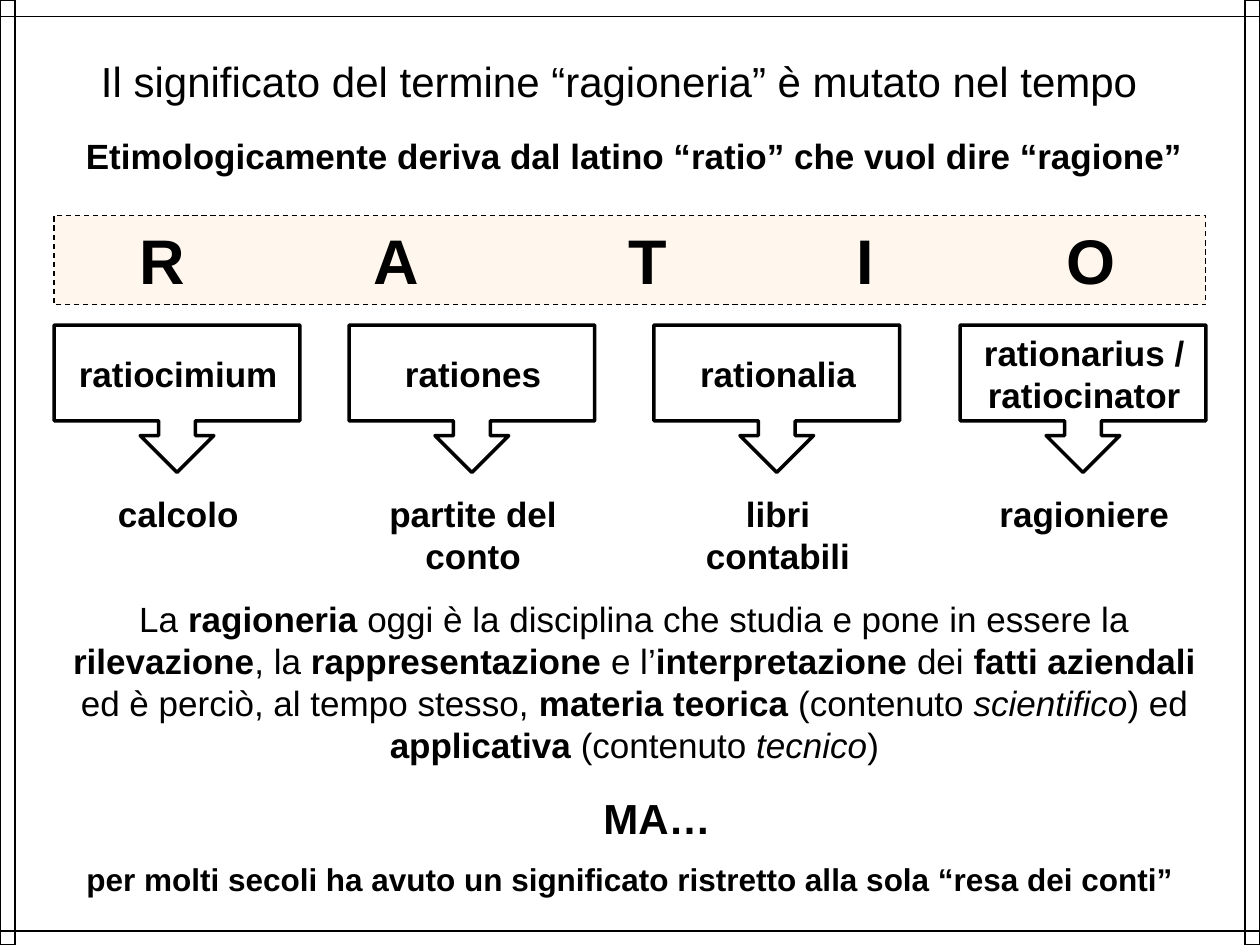
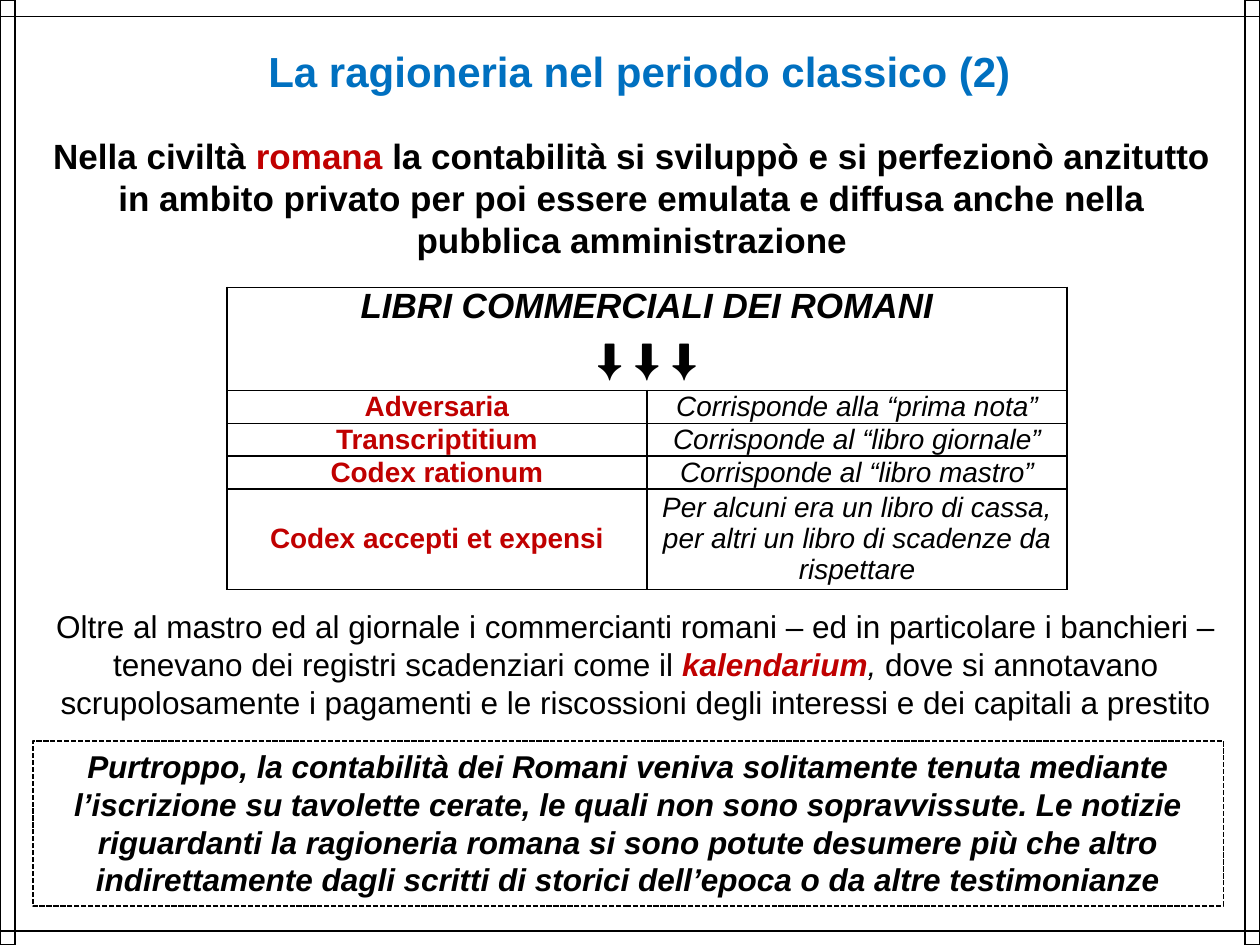
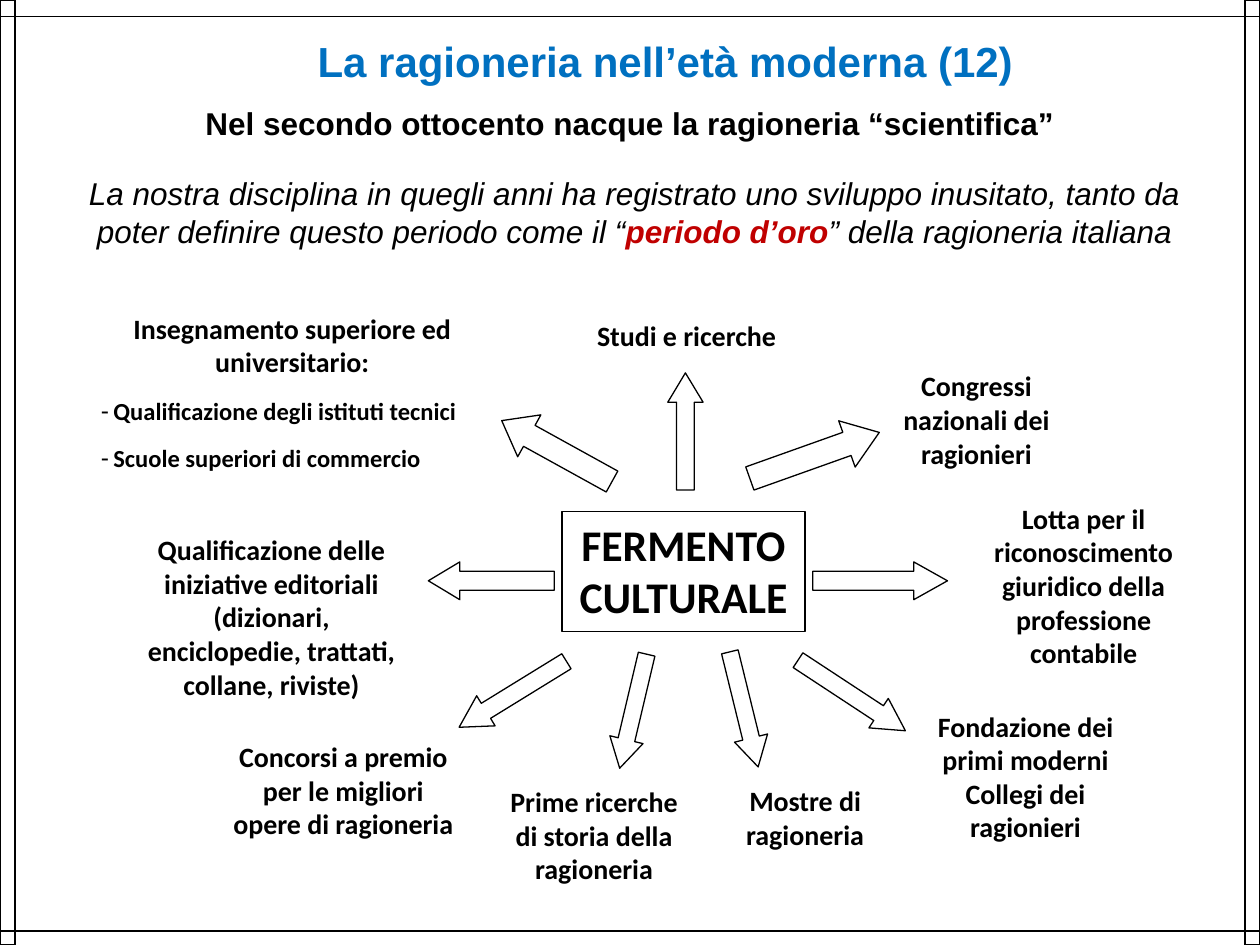
from dataclasses import dataclass

from lxml.etree import SubElement
from pptx import Presentation
from pptx.dml.color import RGBColor
from pptx.enum.dml import MSO_LINE
from pptx.enum.shapes import MSO_CONNECTOR, MSO_SHAPE as SHAPE
from pptx.enum.text import MSO_ANCHOR as ANCHOR, MSO_AUTO_SIZE, PP_ALIGN as ALIGN
from pptx.oxml.ns import qn
from pptx.util import Inches, Pt


@dataclass(frozen=True)
class Theme:
    black: RGBColor = RGBColor(0, 0, 0)
    white: RGBColor = RGBColor(255, 255, 255)
    blue: RGBColor = RGBColor(0x00, 0x70, 0xC0)
    red: RGBColor = RGBColor(0xC0, 0x00, 0x00)
    orange: RGBColor = RGBColor(0xFF, 0x99, 0x00)
    font: str = "Arial"
    diagram_font: str = "Calibri"
    letters: int = 36
    hub: int = 25
    title: int = 24
    text: int = 20
    small: int = 18
    label: int = 16
    list_item: int = 14
    thin: float = 0.75
    thick: float = 2


class Deck:
    TITLE_AND_BODY, TITLE_ONLY = 1, 5

    def __init__(self, theme):
        self.theme = theme
        self.prs = Presentation()
        self.prs.slide_width, self.prs.slide_height = Inches(10), Inches(7.5)
        self.slide = None

    def new_slide(self, layout=TITLE_ONLY):
        """Start a slide with the ruled frame that all slides share."""
        self.slide = self.prs.slides.add_slide(self.prs.slide_layouts[layout])
        for x in (0, 9.88):
            self.shape(SHAPE.RECTANGLE, (x, 0, 0.12, 7.5), fill=None)
        for y in (0.13, 7.39):
            self.rule(y)

    def rule(self, y):
        line = self.slide.shapes.add_connector(
            MSO_CONNECTOR.STRAIGHT, 0, Inches(y), Inches(10), Inches(y))
        line.line.color.rgb = self.theme.black
        line.line.width = Pt(self.theme.thin)
        SubElement(line._element.spPr, qn("a:effectLst"))

    def add_runs(self, p, content, size, style="", color=None, font=None):
        """Fill p from a string or (text, style) runs; styles: b bold, i italic, r red."""
        runs = [(content, style)] if isinstance(content, str) else content
        for text, flags in runs:
            r = p.add_run()
            r.text = text
            r.font.name = font or self.theme.font
            r.font.size = Pt(size)
            r.font.bold = "b" in flags
            r.font.italic = "i" in flags
            r.font.color.rgb = self.theme.red if "r" in flags else color or self.theme.black

    def fill_frame(self, sp, content, size, style="", align=ALIGN.CENTER,
                   anchor=ANCHOR.TOP, **kw):
        tf = sp.text_frame
        tf.word_wrap = True
        tf.auto_size = MSO_AUTO_SIZE.NONE
        tf.vertical_anchor = anchor
        tf.paragraphs[0].alignment = align
        self.add_runs(tf.paragraphs[0], content, size, style, **kw)

    def place(self, sp, at):
        sp.left, sp.top, sp.width, sp.height = map(Inches, at)

    def title(self, at, text, style="b", color=None, align=ALIGN.LEFT):
        sp = self.slide.shapes.title
        self.place(sp, at)
        self.fill_frame(sp, text, self.theme.title, style, align, color=color)

    def text(self, at, content, size, style="", **kw):
        sp = self.slide.shapes.add_textbox(*map(Inches, at))
        self.fill_frame(sp, content, size, style, **kw)

    def shape(self, kind, at, fill="white", line=True, width=None, dash=None):
        sp = self.slide.shapes.add_shape(kind, *map(Inches, at))
        sp.shadow.inherit = False
        if fill:
            sp.fill.solid()
            sp.fill.fore_color.rgb = getattr(self.theme, fill)
        else:
            sp.fill.background()
        if line:
            sp.line.color.rgb = self.theme.black
            sp.line.width = Pt(width or self.theme.thin)
            if dash:
                sp.line.dash_style = dash
        else:
            sp.line.fill.background()
        return sp

    def label(self, at, text, size=None, line=False):
        sp = self.shape(SHAPE.RECTANGLE, at, line=line)
        self.fill_frame(sp, text, size or self.theme.label, "b", font=self.theme.diagram_font)

    def arrow(self, kind, at, rotation=0):
        """Block arrow whose head takes a quarter of its length."""
        sp = self.shape(kind, at)
        sp.rotation = rotation
        sp.adjustments[1] = 0.25 * max(at[2:]) / min(at[2:])

    def dash_list(self, at, heading, items):
        t = self.theme
        sp = self.slide.placeholders[1]
        self.place(sp, at)
        self.fill_frame(sp, heading, t.label, "b", font=t.diagram_font)
        tf = sp.text_frame
        for item in items:
            p = tf.add_paragraph()
            p.alignment = ALIGN.LEFT
            self.add_runs(p, item, t.list_item, "b", font=t.diagram_font)
        for i, p in enumerate(tf.paragraphs):
            p.space_before, p.space_after = Pt(0), Pt(10)
            pPr = p._p.get_or_add_pPr()
            indent = Inches(0.1) if i else 0
            pPr.set("marL", str(indent))
            pPr.set("indent", str(-indent))
            if i:
                SubElement(pPr, qn("a:buChar"), char="-")
            else:
                SubElement(pPr, qn("a:buNone"))

    def tab_stops(self, p, stops):
        tabs = SubElement(p._p.get_or_add_pPr(), qn("a:tabLst"))
        for stop in stops:
            SubElement(tabs, qn("a:tab"), pos=str(Inches(stop)), algn="ctr")

    def format_cell(self, cell):
        cell.margin_left = cell.margin_right = Inches(0.05)
        cell.margin_top = cell.margin_bottom = 0
        tcPr = cell._tc.get_or_add_tcPr()
        for side in ("lnL", "lnR", "lnT", "lnB"):
            ln = SubElement(tcPr, qn(f"a:{side}"), w=str(Pt(1)))
            fill = SubElement(ln, qn("a:solidFill"))
            SubElement(fill, qn("a:srgbClr"), val=str(self.theme.black))
        cell.fill.background()

    def table(self, at, heading, arrows, rows, heights):
        t = self.theme
        table = self.slide.shapes.add_table(len(rows) + 1, 2, *map(Inches, at)).table
        table.first_row = table.horz_banding = False
        for row, height in zip(table.rows, heights):
            row.height = Inches(height)
        for cell in table.iter_cells():
            self.format_cell(cell)
        head = table.cell(0, 0)
        head.merge(table.cell(0, 1))
        p = head.text_frame.paragraphs[0]
        p.alignment = ALIGN.CENTER
        self.add_runs(p, heading, t.text, "bi")
        p = head.text_frame.add_paragraph()
        p.alignment = ALIGN.CENTER
        p.space_before = Pt(6)
        self.add_runs(p, arrows, t.title, "b")
        for i, row in enumerate(rows, 1):
            for j, (text, style) in enumerate(zip(row, ("br", "i"))):
                cell = table.cell(i, j)
                cell.vertical_anchor = ANCHOR.MIDDLE
                p = cell.text_frame.paragraphs[0]
                p.alignment = ALIGN.CENTER
                self.add_runs(p, text, t.label, style)


def etymology_slide(deck):
    t = deck.theme
    deck.new_slide()
    deck.title((0, 0.39, 9.83, 0.51), "Il significato del termine “ragioneria” è mutato nel tempo",
               style="", align=ALIGN.CENTER)
    deck.text((0.23, 1.02, 9.61, 0.44),
              "Etimologicamente deriva dal latino “ratio” che vuol dire “ragione”", t.text, "b")

    terms = [
        (0.43, "ratiocimium", "calcolo"),
        (2.77, "rationes", "partite del conto"),
        (5.19, "rationalia", "libri contabili"),
        (7.62, "rationarius / ratiocinator", "ragioniere"),
    ]
    for x, latin, meaning in terms:
        deck.shape(SHAPE.DOWN_ARROW_CALLOUT, (x, 2.58, 1.95, 1.17), width=t.thick)
        deck.text((x + 0.08, 2.58, 1.81, 0.77), latin, t.text, "b", anchor=ANCHOR.MIDDLE)
        deck.text((x + 0.08, 3.86, 1.81, 0.77), meaning, t.text, "b")

    band = deck.shape(SHAPE.RECTANGLE, (0.43, 1.71, 9.14, 0.71), fill="orange",
                      dash=MSO_LINE.DASH)
    color = band._element.spPr.find(qn("a:solidFill")).find(qn("a:srgbClr"))
    SubElement(color, qn("a:alpha"), val="7000")
    deck.tab_stops(band.text_frame.paragraphs[0], (0.76, 2.62, 4.61, 6.34, 8.13))
    deck.fill_frame(band, "\tR\tA\tT\tI\tO", t.letters, "b", align=ALIGN.LEFT)

    deck.text((0.31, 4.69, 9.45, 1.45), [
        ("La ", ""), ("ragioneria", "b"),
        (" oggi è la disciplina che studia e pone in essere la ", ""),
        ("rilevazione", "b"), (", la ", ""), ("rappresentazione", "b"),
        (" e l’", ""), ("interpretazione ", "b"), ("dei ", ""),
        ("fatti aziendali ", "b"), ("ed è perciò, al tempo stesso, ", ""),
        ("materia teorica ", "b"), ("(contenuto ", ""), ("scientifico", "i"),
        (") ed ", ""), ("applicativa ", "b"), ("(contenuto ", ""),
        ("tecnico", "i"), (")", ""),
    ], t.text)
    deck.text((0.47, 6.78, 9.06, 0.4),
              "per molti secoli ha avuto un significato ristretto alla sola “resa dei conti”",
              t.small, "b")
    deck.text((4.69, 6.24, 1.48, 0.51), "MA…", t.title, "b", align=ALIGN.LEFT)


def roman_books_slide(deck):
    t = deck.theme
    deck.new_slide()
    deck.title((2.03, 0.31, 6.3, 0.51), "La ragioneria nel periodo classico (2)", color=t.blue)
    deck.text((0.29, 1.02, 9.45, 1.11), [
        ("Nella civiltà ", "b"), ("romana", "br"),
        (" la contabilità si sviluppò e si perfezionò anzitutto in ambito privato per poi "
         "essere emulata e diffusa anche nella pubblica amministrazione", "b"),
    ], t.text)
    deck.table((1.8, 2.28, 6.67, 2.42), "LIBRI COMMERCIALI DEI ROMANI", "⬇ ⬇ ⬇", [
        ("Adversaria", "Corrisponde alla “prima nota”"),
        ("Transcriptitium", "Corrisponde al “libro giornale”"),
        ("Codex rationum", "Corrisponde al “libro mastro”"),
        ("Codex accepti et expensi",
         "Per alcuni era un libro di cassa, per altri un libro di scadenze da rispettare"),
    ], heights=(0.82, 0.26, 0.26, 0.26, 0.8))
    deck.text((0.2, 4.77, 9.69, 1.01), [
        ("Oltre al mastro ed al giornale i commercianti romani – ed in particolare i "
         "banchieri – tenevano dei registri scadenziari come il ", ""),
        ("kalendarium", "bir"), (", ", "i"),
        ("dove si annotavano scrupolosamente i pagamenti e le riscossioni degli interessi "
         "e dei capitali a prestito", ""),
    ], t.small)
    note = deck.shape(SHAPE.RECTANGLE, (0.26, 5.88, 9.45, 1.31), fill=None, width=1,
                      dash=MSO_LINE.SQUARE_DOT)
    deck.fill_frame(
        note,
        "Purtroppo, la contabilità dei Romani veniva solitamente tenuta mediante "
        "l’iscrizione su tavolette cerate, le quali non sono sopravvissute. Le notizie "
        "riguardanti la ragioneria romana si sono potute desumere più che altro "
        "indirettamente dagli scritti di storici dell’epoca o da altre testimonianze",
        t.small, "bi")


def cultural_ferment_slide(deck):
    t = deck.theme
    deck.new_slide(Deck.TITLE_AND_BODY)
    deck.title((2.42, 0.23, 5.9, 0.51), "La ragioneria nell’età moderna (12)", color=t.blue)
    deck.text((0.47, 0.78, 9.06, 0.4),
              "Nel secondo ottocento nacque la ragioneria “scientifica”", t.small, "b")
    deck.text((0.31, 1.33, 9.45, 0.71), [
        ("La nostra disciplina in quegli anni ha registrato uno sviluppo inusitato, tanto "
         "da poter definire questo periodo come il “", "i"),
        ("periodo d’oro", "bir"), ("” della ragioneria italiana", "i"),
    ], t.small)

    deck.dash_list((0.7, 2.42, 3.24, 1.43), "Insegnamento superiore ed universitario:",
                   ["Qualificazione degli istituti tecnici", "Scuole superiori di commercio"])
    labels = [
        ((4.55, 2.48, 1.8, 0.47), "Studi e ricerche"),
        ((7.01, 2.88, 1.48, 0.87), "Congressi nazionali dei ragionieri"),
        ((7.59, 3.93, 2.02, 1.39),
         "Lotta per il riconoscimento giuridico della professione contabile"),
        ((7.21, 5.58, 1.86, 1.16), "Fondazione dei primi moderni Collegi dei ragionieri"),
        ((5.67, 6.17, 1.44, 0.63), "Mostre di ragioneria"),
        ((3.91, 6.18, 1.61, 0.87), "Prime ricerche di storia della ragioneria"),
        ((1.72, 5.82, 2.01, 0.87), "Concorsi a premio per le migliori opere di ragioneria"),
        ((1.02, 4.18, 2.27, 1.44), "Qualificazione delle iniziative editoriali (dizionari, "
                                   "enciclopedie, trattati, collane, riviste)"),
    ]
    for at, text in labels:
        deck.label(at, text)
    deck.label((4.46, 4.06, 1.93, 0.95), "FERMENTO CULTURALE", t.hub, line=True)

    arrows = [
        (SHAPE.UP_ARROW, (5.3, 2.96, 0.28, 0.93), 0),
        (SHAPE.UP_ARROW, (6.27, 3.07, 0.39, 1.09), 70.4),
        (SHAPE.RIGHT_ARROW, (6.45, 4.46, 1.07, 0.3), 0),
        (SHAPE.UP_ARROW, (6.62, 5.01, 0.28, 1.02), 123.3),
        (SHAPE.DOWN_ARROW, (5.77, 5.16, 0.27, 0.94), 346.2),
        (SHAPE.DOWN_ARROW, (4.89, 5.18, 0.27, 0.93), 13.3),
        (SHAPE.UP_ARROW, (3.93, 5.01, 0.28, 1), 238.4),
        (SHAPE.LEFT_ARROW, (3.4, 4.46, 1, 0.3), 0),
        (SHAPE.UP_ARROW, (4.23, 3.08, 0.38, 1), 298.9),
    ]
    for kind, at, rotation in arrows:
        deck.arrow(kind, at, rotation)


def main():
    deck = Deck(Theme())
    etymology_slide(deck)
    roman_books_slide(deck)
    cultural_ferment_slide(deck)
    deck.prs.save("out.pptx")


if __name__ == "__main__":
    main()
